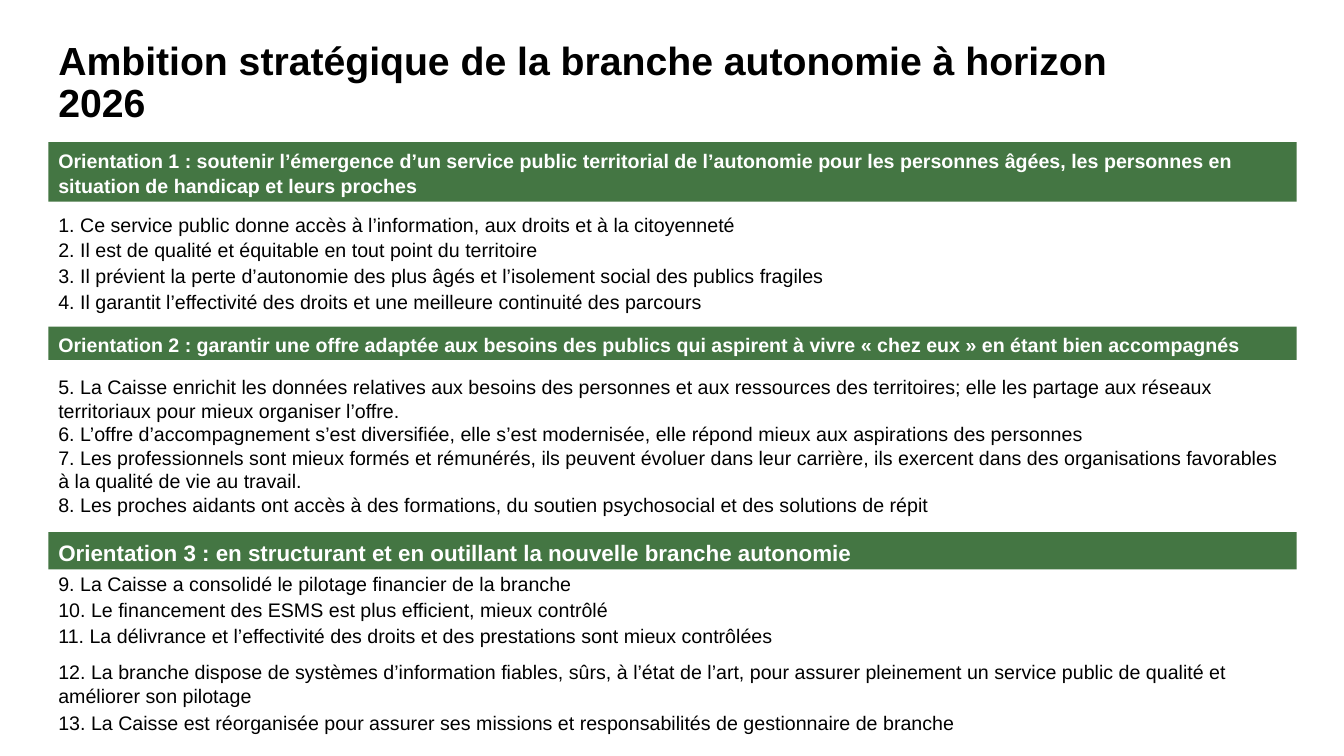
from pptx import Presentation
from pptx.dml.color import RGBColor
from pptx.enum.shapes import MSO_SHAPE
from pptx.enum.text import MSO_ANCHOR, MSO_AUTO_SIZE, PP_ALIGN
from pptx.util import Inches, Pt

LEFT, WIDTH = 0.48, 12.38
GREEN, WHITE, BLACK = "447643", "FFFFFF", "000000"


def rgb(value):
    return RGBColor.from_string(value)


def write(sp, paragraphs, size, color=BLACK, bold=False):
    """Fill a shape with (text, line spacing, space before) paragraphs."""
    tf = sp.text_frame
    tf.word_wrap = True
    tf.vertical_anchor = MSO_ANCHOR.TOP
    for i, (text, spacing, before) in enumerate(paragraphs):
        p = tf.paragraphs[0] if i == 0 else tf.add_paragraph()
        p.alignment = PP_ALIGN.LEFT
        p.line_spacing = spacing
        p.space_before = Pt(before if i else 0)
        r = p.add_run()
        r.text = text
        r.font.name = "Arial"
        r.font.size = Pt(size)
        r.font.bold = bold
        r.font.color.rgb = rgb(color)
    return tf


prs = Presentation()
prs.slide_width, prs.slide_height = Inches(13.33), Inches(7.5)
s = prs.slides.add_slide(prs.slide_layouts[6])

# Title
title = s.shapes.add_textbox(Inches(LEFT), Inches(0.36), Inches(11.5), Inches(1.05))
write(title, [("Ambition stratégique de la branche autonomie à horizon 2026", 0.9, 0)],
      28, bold=True)

# Green headings: top, height, text size, text
headings = [
    (1.41, 0.59, 14, "Orientation 1 : soutenir l’émergence d’un service public territorial de "
     "l’autonomie pour les personnes âgées, les personnes en situation de handicap et leurs proches"),
    (3.24, 0.33, 14, "Orientation 2 : garantir une offre adaptée aux besoins des publics qui "
     "aspirent à vivre « chez eux » en étant bien accompagnés"),
    (5.28, 0.37, 16, "Orientation 3 : en structurant et en outillant la nouvelle branche autonomie"),
]
for top, height, size, text in headings:
    sp = s.shapes.add_shape(MSO_SHAPE.RECTANGLE, Inches(LEFT), Inches(top),
                            Inches(WIDTH), Inches(height))
    sp.shadow.inherit = False
    sp.fill.solid()
    sp.fill.fore_color.rgb = rgb(GREEN)
    sp.line.fill.background()
    tf = write(sp, [(text, 1.07, 0)], size, WHITE, bold=True)
    tf.paragraphs[0].space_after = Pt(8)
    tf.auto_size = MSO_AUTO_SIZE.SHAPE_TO_FIT_TEXT

# Objectives under each heading: top, height, paragraphs
TIGHT, PLAIN = (0.5, 10), (1.0, 0)
objectives = [
    (2.16, 0.92, [
        ("1. Ce service public donne accès à l’information, aux droits et à la citoyenneté", *TIGHT),
        ("2. Il est de qualité et équitable en tout point du territoire", *TIGHT),
        ("3. Il prévient la perte d’autonomie des plus âgés et l’isolement social "
         "des publics fragiles", *TIGHT),
        ("4. Il garantit l’effectivité des droits et une meilleure continuité des parcours", *TIGHT),
    ]),
    (3.67, 1.57, [
        ("5. La Caisse enrichit les données relatives aux besoins des personnes et aux ressources "
         "des territoires; elle les partage aux réseaux territoriaux pour mieux organiser l’offre.",
         *PLAIN),
        ("6. L’offre d’accompagnement s’est diversifiée, elle s’est modernisée, elle répond mieux "
         "aux aspirations des personnes", *PLAIN),
        ("7. Les professionnels sont mieux formés et rémunérés, ils peuvent évoluer dans leur "
         "carrière, ils exercent dans des organisations favorables à la qualité de vie au travail.",
         *PLAIN),
        ("8. Les proches aidants ont accès à des formations, du soutien psychosocial et des "
         "solutions de répit", *PLAIN),
    ]),
    (5.73, 1.77, [
        ("9. La Caisse a consolidé le pilotage financier de la branche", *TIGHT),
        ("10. Le financement des ESMS est plus efficient, mieux contrôlé", *TIGHT),
        ("11. La délivrance et l’effectivité des droits et des prestations sont mieux contrôlées",
         *TIGHT),
        ("12. La branche dispose de systèmes d’information fiables, sûrs, à l’état de l’art, pour "
         "assurer pleinement un service public de qualité et améliorer son pilotage", 1.0, 10),
        ("13. La Caisse est réorganisée pour assurer ses missions et responsabilités de "
         "gestionnaire de branche", *TIGHT),
    ]),
]
for top, height, paragraphs in objectives:
    sp = s.shapes.add_textbox(Inches(LEFT), Inches(top), Inches(WIDTH), Inches(height))
    write(sp, paragraphs, 14)

prs.save("out.pptx")
